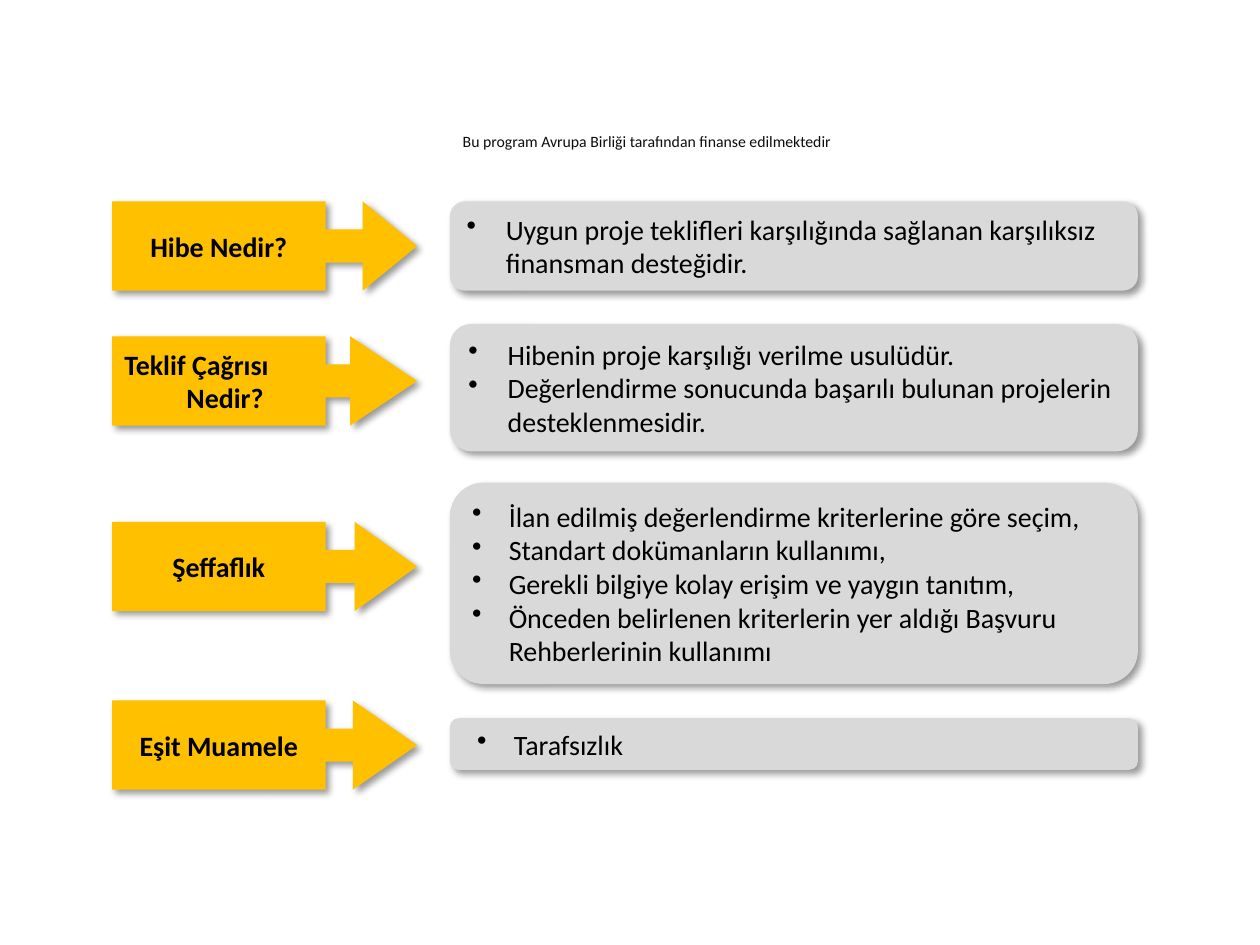
import pptx
import pptx.util
import pptx.dml.color
import pptx.enum.shapes
import pptx.enum.text
import pptx.oxml
import pptx.oxml.ns

Cm = pptx.util.Cm
Pt = pptx.util.Pt
kinds = pptx.enum.shapes.MSO_SHAPE
align = pptx.enum.text.PP_ALIGN
shade = (
    '<a:effectLst %s><a:outerShdw blurRad="50800" dist="38100" dir="2700000" '
    'algn="tl" rotWithShape="0"><a:srgbClr val="000000"><a:alpha val="40000"/>'
    "</a:srgbClr></a:outerShdw></a:effectLst>" % pptx.oxml.ns.nsdecls("a")
)
dot = '<a:buChar %s char="•"/>' % pptx.oxml.ns.nsdecls("a")


def paint(fill, code):
    fill.solid()
    fill.fore_color.rgb = pptx.dml.color.RGBColor.from_string(code)


def panel(kind, left, top, width, height, code):
    shape = slide.shapes.add_shape(kind, Cm(left), Cm(top), Cm(width), Cm(height))
    paint(shape.fill, code)
    shape.line.fill.background()
    shape._element.spPr.append(pptx.oxml.parse_xml(shade))
    shape.text_frame.vertical_anchor = pptx.enum.text.MSO_ANCHOR.MIDDLE
    return shape


deck = pptx.Presentation()
deck.slide_width, deck.slide_height = Cm(25.4), Cm(19.05)
slide = deck.slides.add_slide(deck.slide_layouts[6])

note = slide.shapes.add_textbox(Cm(7.09), Cm(2.54), Cm(11.89), Cm(0.64))
note.text_frame.word_wrap = True
line = note.text_frame.paragraphs[0]
line.text = "Bu program Avrupa Birliği tarafından finanse edilmektedir"
line.alignment = align.CENTER
line.font.size = Pt(9)
line.font.name = "Calibri"
paint(line.font.fill, "0D0D0D")

rows = [
    ("Hibe Nedir?", 4.06, 0.61, 0, 4.06, 1.8, 0.79, 0.79, [
        "Uygun proje teklifleri karşılığında sağlanan karşılıksız finansman desteğidir.",
    ]),
    ("Teklif Çağrısı Nedir?", 6.78, 0.75, 1.25, 6.53, 2.57, 0.79, 0.79, [
        "Hibenin proje karşılığı verilme usulüdür.",
        "Değerlendirme sonucunda başarılı bulunan projelerin desteklenmesidir.",
    ]),
    ("Şeffaflık", 10.52, 0.7, 0, 9.73, 4.06, 0.74, 0.74, [
        "İlan edilmiş değerlendirme kriterlerine göre seçim,",
        "Standart dokümanların kullanımı,",
        "Gerekli bilgiye kolay erişim ve yaygın tanıtım,",
        "Önceden belirlenen kriterlerin yer aldığı Başvuru Rehberlerinin kullanımı",
    ]),
    ("Eşit Muamele", 14.12, 0.72, 0, 14.48, 1.04, 0.99, 0.74, ["Tarafsızlık"]),
]

for title, top, head, step, start, height, margin, hang, items in rows:
    arrow = panel(kinds.RIGHT_ARROW_CALLOUT, 2.26, top, 6.15, 1.8, "FFC000")
    for place, value in enumerate((0.37, 0.5, head, 0.7)):
        arrow.adjustments[place] = value
    line = arrow.text_frame.paragraphs[0]
    line.text = title
    line.alignment = align.LEFT if step else align.CENTER
    if step:
        props = line._p.get_or_add_pPr()
        props.set("marL", str(Cm(step)))
        props.set("indent", str(-Cm(step)))
    line.font.bold = True
    lines = [line]

    box = panel(kinds.ROUNDED_RECTANGLE, 9.07, start, 13.87, height, "D9D9D9")
    for place, item in enumerate(items):
        frame = box.text_frame
        line = frame.add_paragraph() if place else frame.paragraphs[0]
        line.text = item
        line.alignment = align.LEFT
        props = line._p.get_or_add_pPr()
        props.set("marL", str(Cm(margin)))
        props.set("indent", str(-Cm(hang)))
        props.append(pptx.oxml.parse_xml(dot))
        lines.append(line)

    for line in lines:
        line.font.size = Pt(16)
        line.font.name = "Calibri"
        paint(line.font.fill, "000000")

deck.save("out.pptx")
